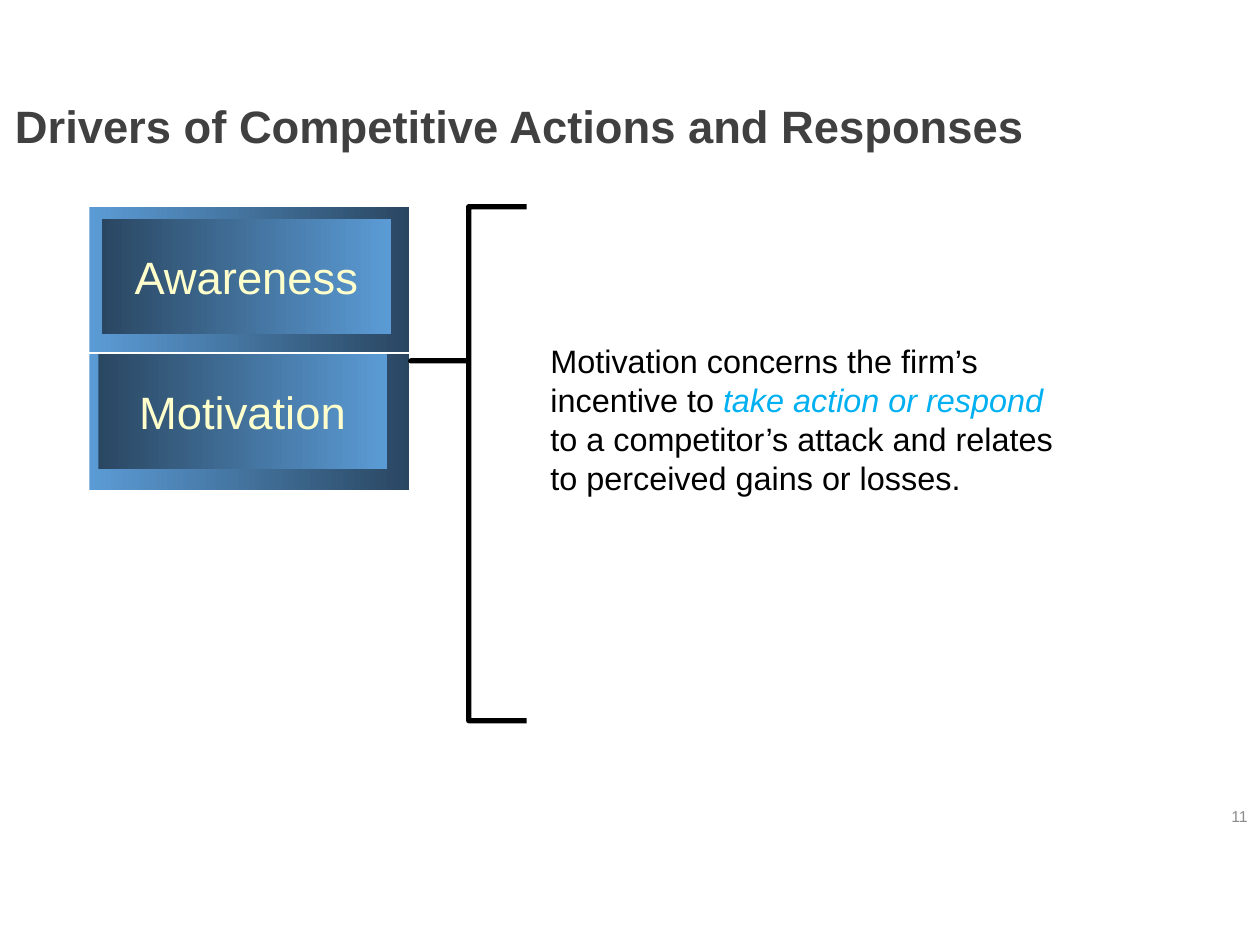
from dataclasses import dataclass

from pptx import Presentation
from pptx.dml.color import RGBColor
from pptx.enum.shapes import MSO_SHAPE
from pptx.enum.text import MSO_ANCHOR, PP_ALIGN
from pptx.util import Inches, Pt

RECTANGLE = MSO_SHAPE.RECTANGLE
LEFT_BRACE = MSO_SHAPE.LEFT_BRACE
TOP, MIDDLE = MSO_ANCHOR.TOP, MSO_ANCHOR.MIDDLE
LEFT, CENTER, RIGHT = PP_ALIGN.LEFT, PP_ALIGN.CENTER, PP_ALIGN.RIGHT


@dataclass(frozen=True)
class Theme:
    font: str = "Arial"
    heading: str = "404040"
    page: str = "8C8C8C"
    body: str = "000000"
    accent: str = "00B0F0"
    label: str = "FFFFCC"
    light: str = "5B9BD5"
    dark: str = "2A4762"
    heading_size: float = 25.9
    body_size: float = 18.5
    page_size: float = 9


@dataclass(frozen=True)
class Box:
    left: float
    top: float
    width: float
    height: float

    def lengths(self) -> tuple:
        return tuple(Inches(v) for v in (self.left, self.top, self.width, self.height))


@dataclass(frozen=True)
class Run:
    text: str
    color: str
    italic: bool = False


@dataclass(frozen=True)
class Driver:
    name: str
    frame: Box
    panel: Box


THEME = Theme()
DRIVERS = (
    Driver("Motivation", Box(0.71, 2.81, 2.54, 1.08), Box(0.78, 2.81, 2.29, 0.91)),
    Driver("Awareness", Box(0.71, 1.64, 2.54, 1.15), Box(0.81, 1.74, 2.29, 0.91)),
)
EXPLANATION = (
    Run("Motivation concerns the firm’s incentive to ", THEME.body),
    Run("take action or respond", THEME.accent, italic=True),
    Run(" to a competitor’s attack and relates to perceived gains or losses.", THEME.body),
)


def write(holder, *runs: Run, size: float, bold: bool = False, align=LEFT,
          anchor=TOP, line_spacing: float = 1.0) -> None:
    frame = holder.text_frame
    frame.word_wrap = True
    frame.vertical_anchor = anchor
    paragraph = frame.paragraphs[0]
    paragraph.alignment = align
    paragraph.line_spacing = line_spacing
    for item in runs:
        run = paragraph.add_run()
        run.text = item.text
        run.font.name = THEME.font
        run.font.size = Pt(size)
        run.font.bold = bold
        run.font.italic = item.italic
        run.font.color.rgb = RGBColor.from_string(item.color)


def add_gradient_panel(shapes, box: Box, start: str, end: str):
    panel = shapes.add_shape(RECTANGLE, *box.lengths())
    panel.shadow.inherit = False
    panel.line.fill.background()
    panel.fill.gradient()
    panel.fill.gradient_angle = 0
    for stop, color, position in zip(panel.fill.gradient_stops, (start, end), (0, 1)):
        stop.color.rgb = RGBColor.from_string(color)
        stop.position = position
    return panel


def add_driver(shapes, driver: Driver) -> None:
    group = shapes.add_group_shape()
    add_gradient_panel(group.shapes, driver.frame, THEME.light, THEME.dark)
    panel = add_gradient_panel(group.shapes, driver.panel, THEME.dark, THEME.light)
    write(panel, Run(driver.name, THEME.label), size=THEME.heading_size,
          align=CENTER, anchor=MIDDLE)


def add_brace(shapes, box: Box, curve: float, point: float) -> None:
    brace = shapes.add_shape(LEFT_BRACE, *box.lengths())
    brace.shadow.inherit = False
    brace.fill.background()
    brace.line.color.rgb = RGBColor.from_string(THEME.body)
    brace.line.width = Pt(3)
    brace.adjustments[0] = curve
    brace.adjustments[1] = point


def main() -> None:
    deck = Presentation()
    deck.slide_width, deck.slide_height = Inches(10), Inches(7.5)
    shapes = deck.slides.add_slide(deck.slide_layouts[6]).shapes

    heading = shapes.add_textbox(*Box(0.02, 0.75, 8.5, 0.54).lengths())
    write(heading, Run("Drivers of Competitive Actions and Responses", THEME.heading),
          size=THEME.heading_size, bold=True, anchor=MIDDLE, line_spacing=0.9)
    page_number = shapes.add_textbox(*Box(9.51, 6.34, 0.49, 0.27).lengths())
    write(page_number, Run("11", THEME.page), size=THEME.page_size,
          align=RIGHT, anchor=MIDDLE)

    for driver in DRIVERS:
        add_driver(shapes, driver)
    add_brace(shapes, Box(3.26, 1.64, 0.92, 4.08), curve=0, point=0.3)

    explanation = shapes.add_textbox(*Box(4.27, 2.66, 4.38, 1.34).lengths())
    write(explanation, *EXPLANATION, size=THEME.body_size)
    deck.save("out.pptx")


if __name__ == "__main__":
    main()
